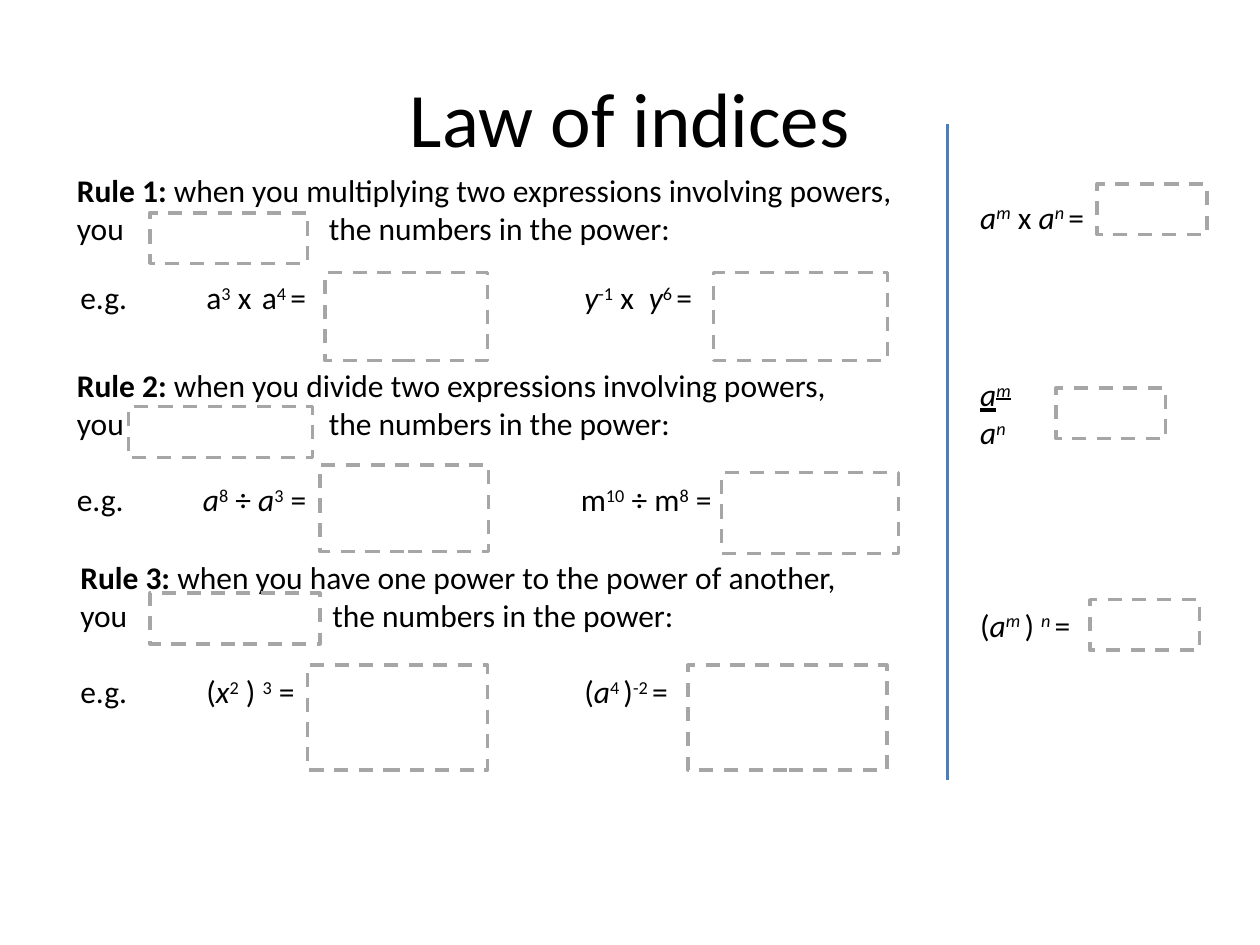
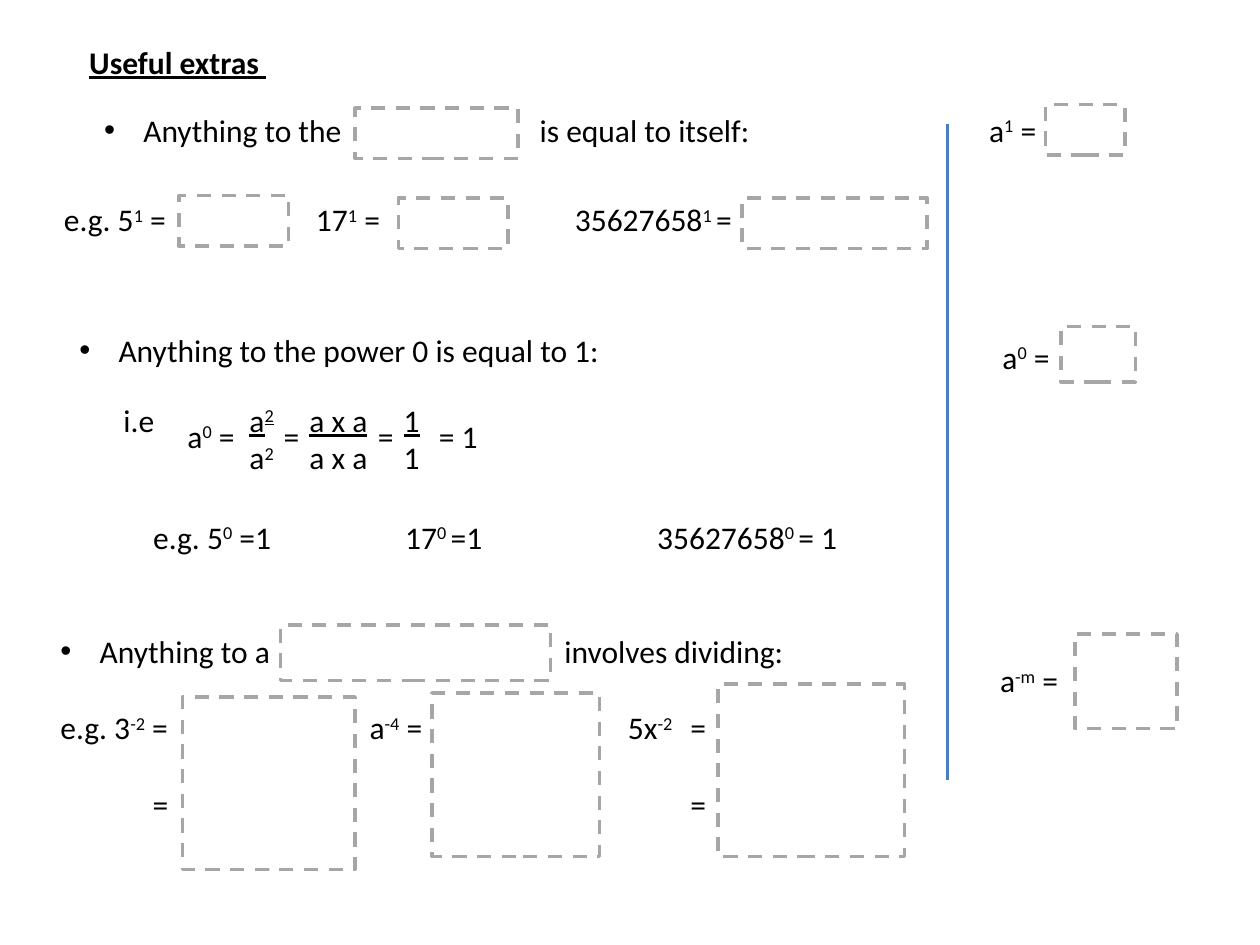
from itertools import groupby

from lxml import etree
from pptx import Presentation
from pptx import util as u
from pptx.dml.color import RGBColor
from pptx.enum import dml, shapes, text
from pptx.oxml import ns

# Shared style
FONT = "Calibri"
INK, DASH_GREY, RULE_BLUE = "000000", "A6A6A6", "4B7EBC"
BODY_SIZE, TITLE_SIZE = 18, 44
LINE_GAP = 22  # points: the height of one body line
BULLET_INDENT = 0.79
BLANK_HEIGHT = 1.02
MARKS = {"^": "superscript", "~": "italic", "_": "underline", "#": "bold"}


def color(hex_string):
    return RGBColor.from_string(hex_string)


def add_xml(parent, tag, **attributes):
    return etree.SubElement(parent, ns.qn(tag), attributes)


def styled_pieces(markup):
    """Yield (active styles, text); each mark switches its style on or off."""
    active, styled = frozenset(), []
    for letter in markup:
        if letter in MARKS:
            active = active ^ {MARKS[letter]}
        else:
            styled.append((active, letter))
    for styles, letters in groupby(styled, key=lambda pair: pair[0]):
        yield styles, "".join(letter for _, letter in letters)


def write_runs(paragraph, markup, size):
    for styles, piece in styled_pieces(markup):
        run = paragraph.add_run()
        run.text = piece
        font = run.font
        font.name, font.size = FONT, u.Pt(size)
        font.color.rgb = color(INK)
        for style in styles - {"superscript"}:
            setattr(font, style, True)
        if "superscript" in styles:
            run._r.get_or_add_rPr().set("baseline", "30000")


def format_paragraph(paragraph, tabs, bullet):
    properties = paragraph._p.get_or_add_pPr()
    if bullet:
        properties.set("marL", str(u.Cm(BULLET_INDENT)))
        properties.set("indent", str(-u.Cm(BULLET_INDENT)))
        add_xml(properties, "a:buFont", typeface="Arial")
        add_xml(properties, "a:buChar", char="•")
    if tabs:
        tab_list = add_xml(properties, "a:tabLst")
        for position in tabs:
            add_xml(tab_list, "a:tab", pos=str(u.Cm(position)), algn="l")


def line(markup, *tabs, gap=0, bullet=False):
    """Describe one line of text with its tab stops in centimetres."""
    return {"markup": markup, "tabs": tabs, "gap": gap, "bullet": bullet}


def add_text(slide, left, top, width, *lines, height=BLANK_HEIGHT, size=BODY_SIZE):
    box = slide.shapes.add_textbox(u.Cm(left), u.Cm(top), u.Cm(width), u.Cm(height))
    frame = box.text_frame
    frame.word_wrap = True
    for index, item in enumerate(lines):
        paragraph = frame.add_paragraph() if index else frame.paragraphs[0]
        if item["gap"]:
            paragraph.space_before = u.Pt(item["gap"])
        format_paragraph(paragraph, item["tabs"], item["bullet"])
        write_runs(paragraph, item["markup"], size)
    return frame


def add_title(slide, title):
    frame = add_text(slide, 1.27, 0.76, 22.86, line(title), height=3.18, size=TITLE_SIZE)
    frame.vertical_anchor = text.MSO_ANCHOR.MIDDLE
    frame.paragraphs[0].alignment = text.PP_ALIGN.CENTER


def add_blank(slide, left, top, width, height=BLANK_HEIGHT):
    """Dashed box in which the answer is written."""
    shape = slide.shapes.add_shape(
        shapes.MSO_SHAPE.RECTANGLE, u.Cm(left), u.Cm(top), u.Cm(width), u.Cm(height))
    shape.shadow.inherit = False
    shape.fill.background()
    shape.line.color.rgb = color(DASH_GREY)
    shape.line.width = u.Pt(2)
    shape.line.dash_style = dml.MSO_LINE.DASH


def add_divider(slide):
    x = u.Cm(19.1)
    divider = slide.shapes.add_connector(
        shapes.MSO_CONNECTOR.STRAIGHT, x, u.Cm(2.51), x, u.Cm(15.72))
    divider.line.color.rgb = color(RULE_BLUE)
    divider.line.width = u.Pt(2.25)
    add_xml(divider._element.spPr, "a:effectLst")


def rule_lines(number, condition):
    return (line(f"#Rule {number}:# when you {condition},"),
            line("you\tthe numbers in the power:", 5.08))


def build_laws(slide):
    add_title(slide, "Law of indices")

    # Rules with their examples
    add_text(slide, 1.3, 3.33, 19,
             *rule_lines(1, "multiplying two expressions involving powers"), height=1.8)
    add_text(slide, 1.37, 5.49, 16.94,
             line("e.g.\ta^3^ x\ta^4 ^=\t~y~^-1^ x\t~y~^6 ^=", 2.54, 3.66, 10.16, 11.46))
    add_text(slide, 1.3, 7.26, 18.21,
             *rule_lines(2, "divide two expressions involving powers"),
             line("e.g.\t~a~^8^ ÷ ~a~^3^ =\tm^10^ ÷ m^8^ =", 2.54, 10.16, gap=LINE_GAP),
             height=3.84)
    add_text(slide, 1.37, 11.13, 18.21,
             *rule_lines(3, "have one power to the power of another"),
             line("e.g.\t(~x~^2^ ) ^3^ =\t(~a~^4 ^)^-2 ^=", 2.54, 10.16, gap=LINE_GAP),
             height=3.33)

    # General forms
    add_divider(slide)
    add_text(slide, 19.51, 3.86, 3, line("~a^m^~ x ~a^n ^~="))
    add_text(slide, 19.51, 7.44, 1.5, line("~_a^m^_~"), line("~a^n^~"), height=1.8)
    add_text(slide, 19.51, 12.09, 3, line("(~a^m ^~) ~^n ^~="))

    # Answer blanks: operations, examples, general forms
    for blank in [
        (3.02, 4.29, 3.18), (2.59, 8.2, 3.71), (3.02, 11.96, 3.43),
        (6.55, 5.49, 3.28, 1.78), (14.38, 5.49, 3.51, 1.78),
        (6.45, 9.37, 3.4, 1.75), (14.55, 9.53, 3.56, 1.63),
        (6.2, 13.41, 3.63, 2.11), (13.87, 13.41, 4.01, 2.11),
        (22.12, 3.71, 2.21), (21.29, 7.82, 2.21), (21.97, 12.09, 2.21),
    ]:
        add_blank(slide, *blank)


def build_extras(slide):
    add_text(slide, 1.55, 0.74, 5, line("#_Useful extras _#"))

    # Power 1
    add_text(slide, 1.85, 2.11, 14.53,
             line("Anything to the\tis equal to itself:", 8.78, bullet=True))
    add_text(slide, 1.04, 3.91, 14.5,
             line("e.g. 5^1^ =\t17^1^ =\t35627658^1 ^=", 5.08, 10.3))

    # Power 0
    add_text(slide, 1.35, 6.55, 12.7,
             line("Anything to the power 0 is equal to 1:", bullet=True))
    fraction_tabs = (2.54, 3.75, 5.65)
    add_text(slide, 2.24, 7.95, 8,
             line("i.e\t_a^2^_\t_a x a_\t_1_", *fraction_tabs),
             line("\ta^2^\ta x a\t1", *fraction_tabs), height=1.8)
    add_text(slide, 3.53, 8.28, 8, line("a^0^ =\t=\t=\t= 1", 1.94, 3.84, 5.07))
    add_text(slide, 2.84, 10.31, 15,
             line("e.g. 5^0^ =1\t17^0 ^=1\t35627658^0 ^= 1", 5.08, 10.16))

    # Negative powers
    add_text(slide, 0.97, 12.62, 17.55,
             line("Anything to a\tinvolves dividing:", 10.16, bullet=True),
             line("e.g. 3^-2^ =\ta^-4^ =\t5x^-2^\t=", 6.23, 11.44, 12.7, gap=LINE_GAP),
             line("\t=\t=", 1.86, 12.7, gap=LINE_GAP), height=4.11)

    # General forms
    add_divider(slide)
    for left, top, power in [(19.69, 2.11, "1"), (19.96, 6.68, "0"), (19.91, 13.21, "-m")]:
        add_text(slide, left, top, 2.2, line(f"a^{power}^ ="))

    # Answer blanks: power 1, negative powers, general forms
    for blank in [
        (7.16, 2.18, 3.28), (3.61, 3.94, 2.21), (8.03, 3.99, 2.21), (14.96, 3.99, 3.73),
        (5.66, 12.6, 5.44, 1.12), (3.68, 14.05, 3.48, 3.48),
        (8.71, 13.97, 3.38, 3.3), (14.48, 13.79, 3.76, 3.48),
        (21.08, 2.11, 1.6), (21.39, 6.58, 1.5, 1.12), (21.67, 12.78, 2.06, 1.91),
    ]:
        add_blank(slide, *blank)


def main():
    presentation = Presentation()
    presentation.slide_width, presentation.slide_height = u.Cm(25.4), u.Cm(19.05)
    blank_layout = presentation.slide_layouts[6]
    for build in (build_laws, build_extras):
        build(presentation.slides.add_slide(blank_layout))
    presentation.save("out.pptx")


if __name__ == "__main__":
    main()
